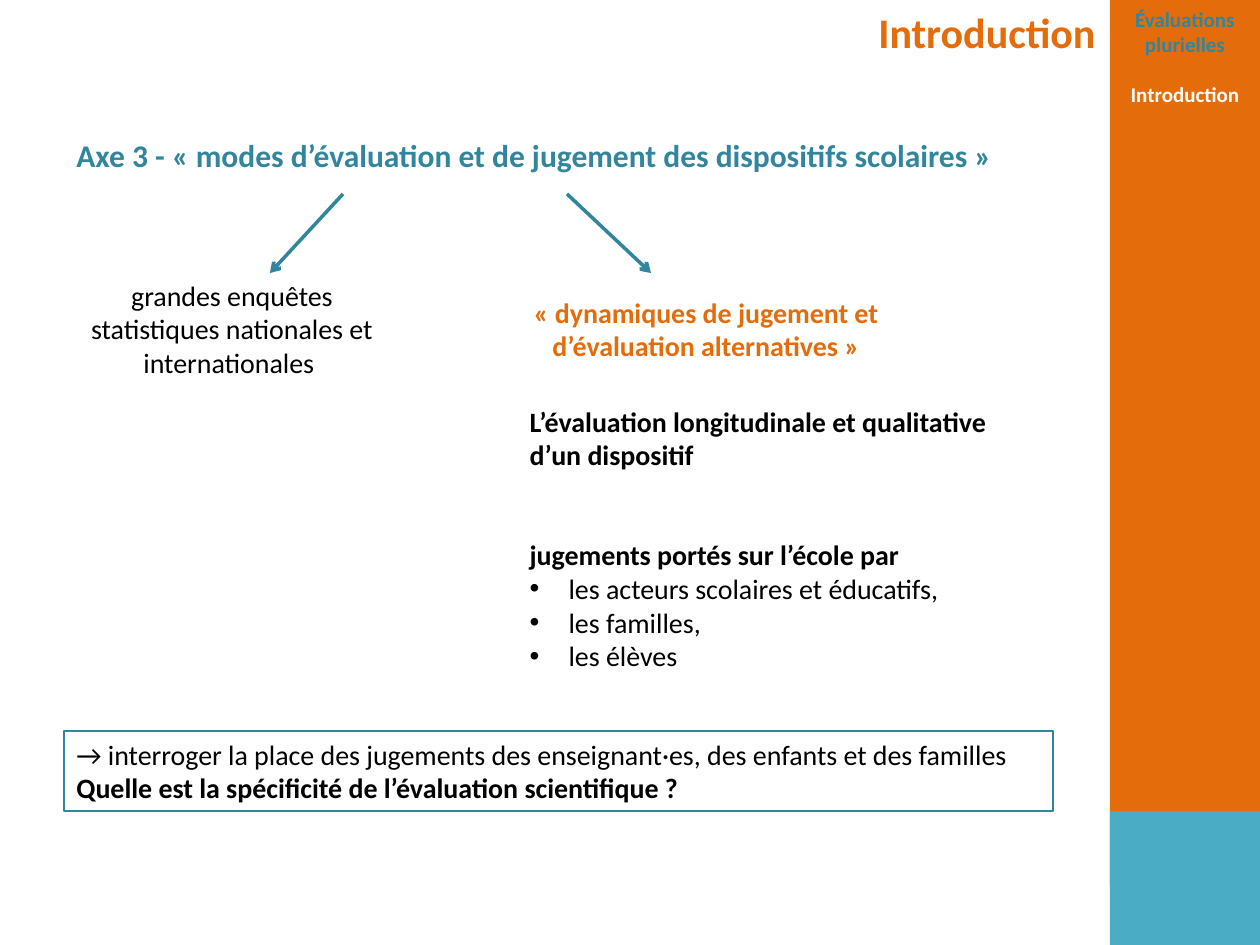
from lxml.etree import SubElement
from pptx import Presentation
from pptx.dml.color import RGBColor
from pptx.enum.shapes import MSO_CONNECTOR, MSO_SHAPE
from pptx.enum.text import MSO_ANCHOR, MSO_AUTO_SIZE, PP_ALIGN
from pptx.oxml.ns import qn
from pptx.util import Emu, Pt

ORANGE, TEAL, SKY = "E46C0A", "31859C", "4BACC6"
BLACK, WHITE = "000000", "FFFFFF"
INDENT = 39


def px(length):
    return Emu(round(length * 914400 / 126))


def colour(value):
    return RGBColor.from_string(value)


def set_all(target, values):
    for name, value in values.items():
        setattr(target, name, value)


def place(box, left, top, width, height):
    set_all(box, {"left": px(left), "top": px(top), "width": px(width), "height": px(height)})


def set_bullet(para, bullet):
    properties = para._p.get_or_add_pPr()
    properties.set("marL", str(px(INDENT) if bullet else 0))
    properties.set("indent", str(-px(INDENT) if bullet else 0))
    if bullet:
        SubElement(properties, qn("a:buFont"), typeface="Arial")
        SubElement(properties, qn("a:buChar"), char="•")
    else:
        SubElement(properties, qn("a:buNone"))


def write(box, lines, align=PP_ALIGN.LEFT):
    frame = box.text_frame
    set_all(frame, {"word_wrap": True, "auto_size": MSO_AUTO_SIZE.NONE,
                    "vertical_anchor": MSO_ANCHOR.TOP})
    for index, line in enumerate(lines):
        para = frame.add_paragraph() if index else frame.paragraphs[0]
        set_all(para, {"alignment": align, "space_before": Pt(line.get("gap", 0))})
        set_bullet(para, line.get("bullet", False))
        span = para.add_run()
        span.text = line["text"]
        set_all(span.font, {"name": "Calibri", "size": Pt(line.get("size", 16)),
                            "bold": line.get("bold", False)})
        span.font.color.rgb = colour(line.get("colour", BLACK))


def add_text(page, area, lines, align=PP_ALIGN.LEFT):
    box = page.shapes.add_textbox(*map(px, area))
    write(box, lines, align)


def add_box(shapes, area, fill=None, line=None):
    box = shapes.add_shape(MSO_SHAPE.RECTANGLE, *map(px, area))
    box.shadow.inherit = False
    if fill:
        box.fill.solid()
        box.fill.fore_color.rgb = colour(fill)
    else:
        box.fill.background()
    if line:
        box.line.color.rgb = colour(line)
        box.line.width = Pt(0.75)
    else:
        box.line.fill.background()
    return box


def add_arrow(page, start, end):
    arrow = page.shapes.add_connector(MSO_CONNECTOR.STRAIGHT, *map(px, start + end))
    arrow.line.color.rgb = colour(TEAL)
    arrow.line.width = Pt(2)
    SubElement(arrow.line._get_or_add_ln(), qn("a:tailEnd"), type="arrow")
    SubElement(arrow._element.spPr, qn("a:effectLst"))


def add_sidebar(page):
    group = page.shapes.add_group_shape()
    band = add_box(group.shapes, (1110, 0, 150, 886), fill=ORANGE)
    write(band, [
        {"text": "Évaluations plurielles", "size": 12, "bold": True, "colour": TEAL},
        {"text": "Introduction", "size": 12, "bold": True, "colour": WHITE, "gap": 14},
    ], PP_ALIGN.CENTER)
    add_box(group.shapes, (1110, 811, 150, 134), fill=SKY)


def main():
    deck = Presentation()
    set_all(deck, {"slide_width": px(1260), "slide_height": px(945)})
    page = deck.slides.add_slide(deck.slide_layouts[1])
    title, body = page.placeholders

    add_sidebar(page)
    place(title, 864, 0, 246, 63)
    write(title, [{"text": "Introduction", "size": 24, "bold": True, "colour": ORANGE}],
          PP_ALIGN.CENTER)
    add_text(page, (64, 130, 956, 50), [
        {"text": "Axe 3 - « modes d’évaluation et de jugement des dispositifs scolaires »",
         "size": 18, "bold": True, "colour": TEAL}])
    add_text(page, (462, 289, 488, 81), [
        {"text": "« dynamiques de jugement et d’évaluation alternatives »",
         "bold": True, "colour": ORANGE}], PP_ALIGN.CENTER)
    add_text(page, (64, 272, 336, 148), [
        {"text": "grandes enquêtes statistiques nationales et internationales "}],
        PP_ALIGN.CENTER)

    place(body, 517, 398, 537, 453)
    actors = ["les acteurs scolaires et éducatifs,", "les familles,", "les élèves"]
    write(body, [
        {"text": "L’évaluation longitudinale et qualitative d’un dispositif", "bold": True},
        {"text": "jugements portés sur l’école par", "bold": True, "gap": 38},
    ] + [{"text": actor, "bullet": True} for actor in actors])

    add_arrow(page, (343, 194), (270, 273))
    add_arrow(page, (567, 194), (651, 273))

    question = add_box(page.shapes, (64, 731, 989, 80), line=TEAL)
    write(question, [
        {"text": "→ interroger la place des jugements des enseignant·es, "
                 "des enfants et des familles"},
        {"text": "Quelle est la spécificité de l’évaluation scientifique ?", "bold": True},
    ])
    deck.save("out.pptx")


if __name__ == "__main__":
    main()
